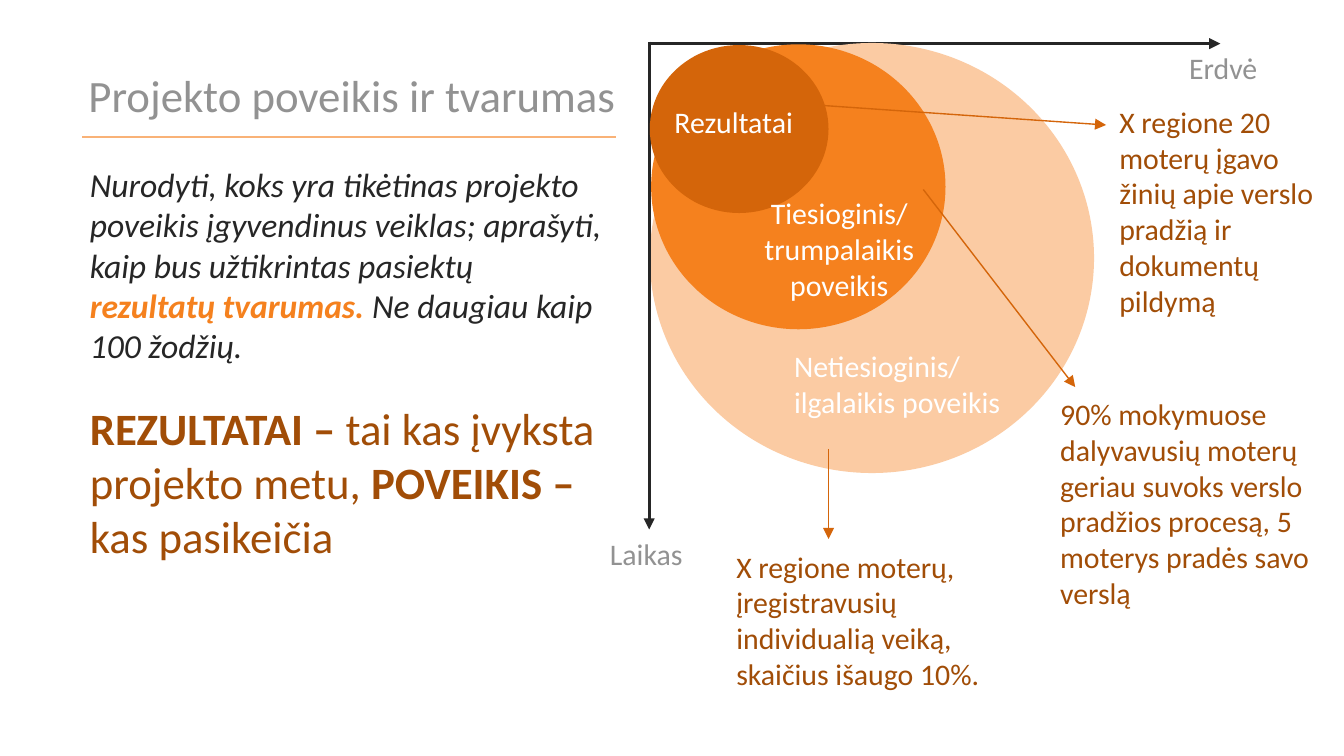
from dataclasses import dataclass

from lxml import etree
from pptx import Presentation
from pptx.dml.color import RGBColor
from pptx.enum.shapes import MSO_CONNECTOR, MSO_SHAPE
from pptx.enum.text import MSO_ANCHOR, PP_ALIGN
from pptx.oxml.ns import qn
from pptx.util import Pt

STRAIGHT, ELLIPSE = MSO_CONNECTOR.STRAIGHT, MSO_SHAPE.OVAL
LEFT, CENTER, TOP = PP_ALIGN.LEFT, PP_ALIGN.CENTER, MSO_ANCHOR.TOP
PX = 4572  # EMU per px, 200 px to the inch
PAGE_SIZE = (2000, 1125)


@dataclass(frozen=True)
class Theme:
    font: str = "Calibri"
    ink: str = "262626"
    gray: str = "929292"
    white: str = "FFFFFF"
    pale: str = "FBCBA3"
    rule: str = "F9B277"
    orange: str = "F5811E"
    deep: str = "D4650A"
    brown: str = "A14D07"
    title: int = 24
    body: int = 18
    label: int = 16
    thick: float = 1.5
    thin: float = 0.75


THEME = Theme()

# Lines: start, end, colour, width, arrowhead
TITLE_RULE = ((916, 204), (122, 204), THEME.rule, THEME.thick, False)
SPACE_AXIS = ((966, 65), (1816, 65), THEME.ink, THEME.thick, True)
TIME_AXIS = ((966, 62), (966, 788), THEME.ink, THEME.thick, True)
EXAMPLE_ARROWS = [
    (start, end, THEME.deep, THEME.thin, True)
    for start, end in [
        ((1152, 152), (1646, 186)),
        ((1374, 282), (1600, 576)),
        ((1233, 668), (1233, 802)),
    ]
]

# Nested circles, largest first: place, fill
OUTER_CIRCLE = ((967, 64, 661, 640), THEME.pale)
INNER_CIRCLES = [
    ((969, 66, 438, 424), THEME.orange),
    ((967, 67, 266, 250), THEME.deep),
]

# Main texts: place, size, spans of (text, colour, bold, italic)
MAIN_TEXTS = [
    ((114, 234, 802, 330), THEME.body, [
        ("Nurodyti, koks yra tikėtinas projekto poveikis įgyvendinus veiklas; "
         "aprašyti, kaip bus užtikrintas pasiektų ", THEME.ink, False, True),
        ("rezultatų tvarumas. ", THEME.orange, True, True),
        ("Ne daugiau kaip 100 žodžių.", THEME.ink, False, True),
    ]),
    ((112, 91, 840, 116), THEME.title, [
        ("Projekto poveikis ir tvarumas", THEME.gray, False, False),
    ]),
    ((114, 587, 796, 116), THEME.title, [
        ("REZULTATAI – ", THEME.brown, True, False),
        ("tai kas įvyksta projekto metu, ", THEME.brown, False, False),
        ("POVEIKIS – ", THEME.brown, True, False),
        ("kas pasikeičia", THEME.brown, False, False),
    ]),
]

# Diagram labels: place, text, colour, alignment
LABELS = [
    ((888, 788, 194, 84), "Laikas", THEME.gray, LEFT),
    ((1750, 64, 168, 84), "Erdvė", THEME.gray, LEFT),
    ((1162, 508, 350, 84), "Netiesioginis/ ilgalaikis poveikis", THEME.white, LEFT),
    ((984, 144, 234, 84), "Rezultatai", THEME.white, LEFT),
    ((1076, 280, 346, 100), "Tiesioginis/ trumpalaikis poveikis", THEME.white, CENTER),
    ((1646, 144, 342, 362),
     "X regione 20 moterų įgavo žinių apie verslo pradžią ir dokumentų pildymą",
     THEME.brown, LEFT),
    ((1558, 579, 462, 266),
     "90% mokymuose dalyvavusių moterų geriau suvoks verslo pradžios procesą, "
     "5 moterys pradės savo verslą", THEME.brown, LEFT),
    ((1076, 806, 462, 368),
     "X regione moterų, įregistravusių individualią veiką, skaičius išaugo 10%.",
     THEME.brown, LEFT),
]


def emu(lengths):
    return [length * PX for length in lengths]


def color(code):
    return RGBColor.from_string(code)


def add_line(page, start, end, code, width, arrow):
    line = page.shapes.add_connector(STRAIGHT, *emu(start + end))
    line.line.color.rgb = color(code)
    line.line.width = Pt(width)
    if arrow:
        head = etree.SubElement(line.line._get_or_add_ln(), qn("a:tailEnd"))
        head.set("type", "triangle")
    etree.SubElement(line._element.spPr, qn("a:effectLst"))


def add_circle(page, place, code):
    circle = page.shapes.add_shape(ELLIPSE, *emu(place))
    circle.shadow.inherit = False
    circle.fill.solid()
    circle.fill.fore_color.rgb = color(code)
    circle.line.fill.background()


def add_text(page, place, size, spans, alignment=LEFT):
    frame = page.shapes.add_textbox(*emu(place)).text_frame
    frame.word_wrap = True
    frame.vertical_anchor = TOP
    para = frame.paragraphs[0]
    para.alignment = alignment
    for text, code, bold, italic in spans:
        span = para.add_run()
        span.text = text
        span.font.name = THEME.font
        span.font.size = Pt(size)
        span.font.color.rgb = color(code)
        span.font.bold = bold
        span.font.italic = italic


def main():
    deck = Presentation()
    deck.slide_width, deck.slide_height = emu(PAGE_SIZE)
    page = deck.slides.add_slide(deck.slide_layouts[6])

    # Title rule, axes and circles
    add_line(page, *TITLE_RULE)
    add_line(page, *SPACE_AXIS)
    add_circle(page, *OUTER_CIRCLE)
    add_line(page, *TIME_AXIS)
    for circle in INNER_CIRCLES:
        add_circle(page, *circle)

    # Texts
    for place, size, spans in MAIN_TEXTS:
        add_text(page, place, size, spans)
    for place, text, code, alignment in LABELS:
        add_text(page, place, THEME.label, [(text, code, False, False)], alignment)

    # Arrows from the circles to their examples
    for arrow in EXAMPLE_ARROWS:
        add_line(page, *arrow)

    deck.save("out.pptx")


if __name__ == "__main__":
    main()
